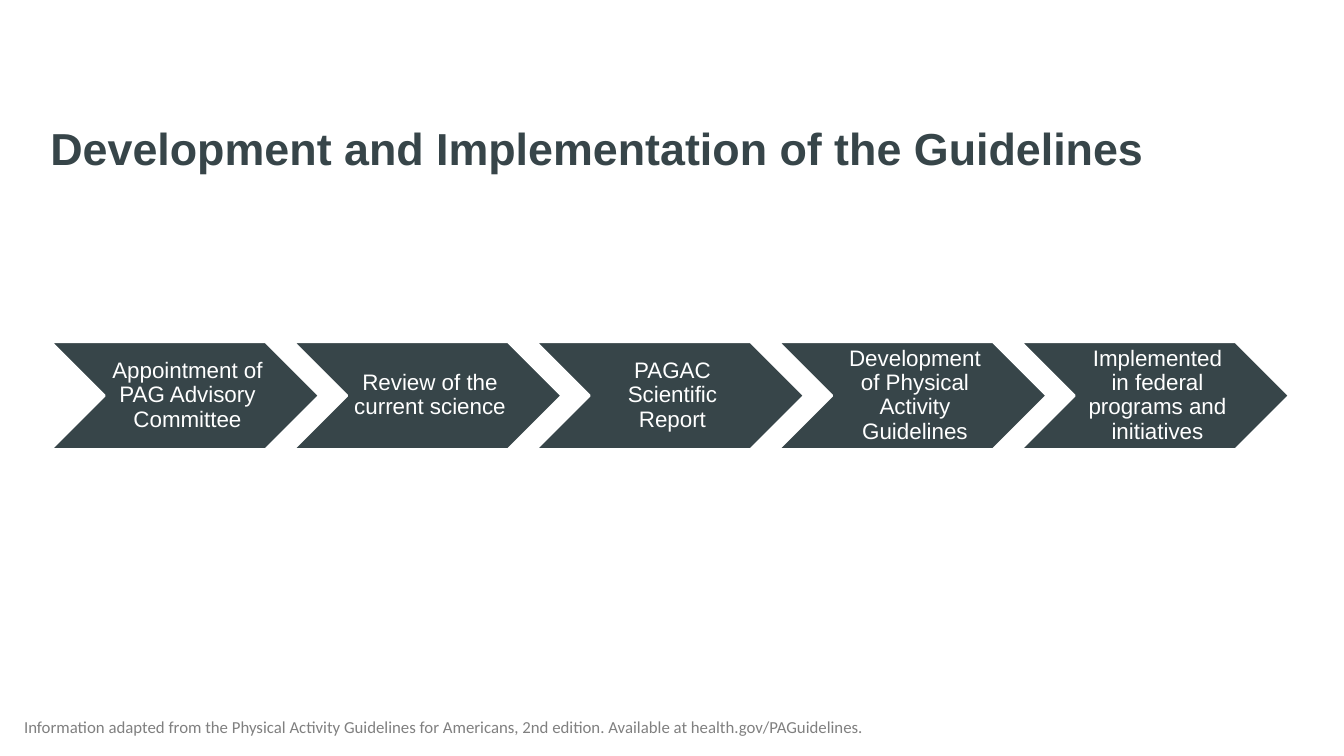
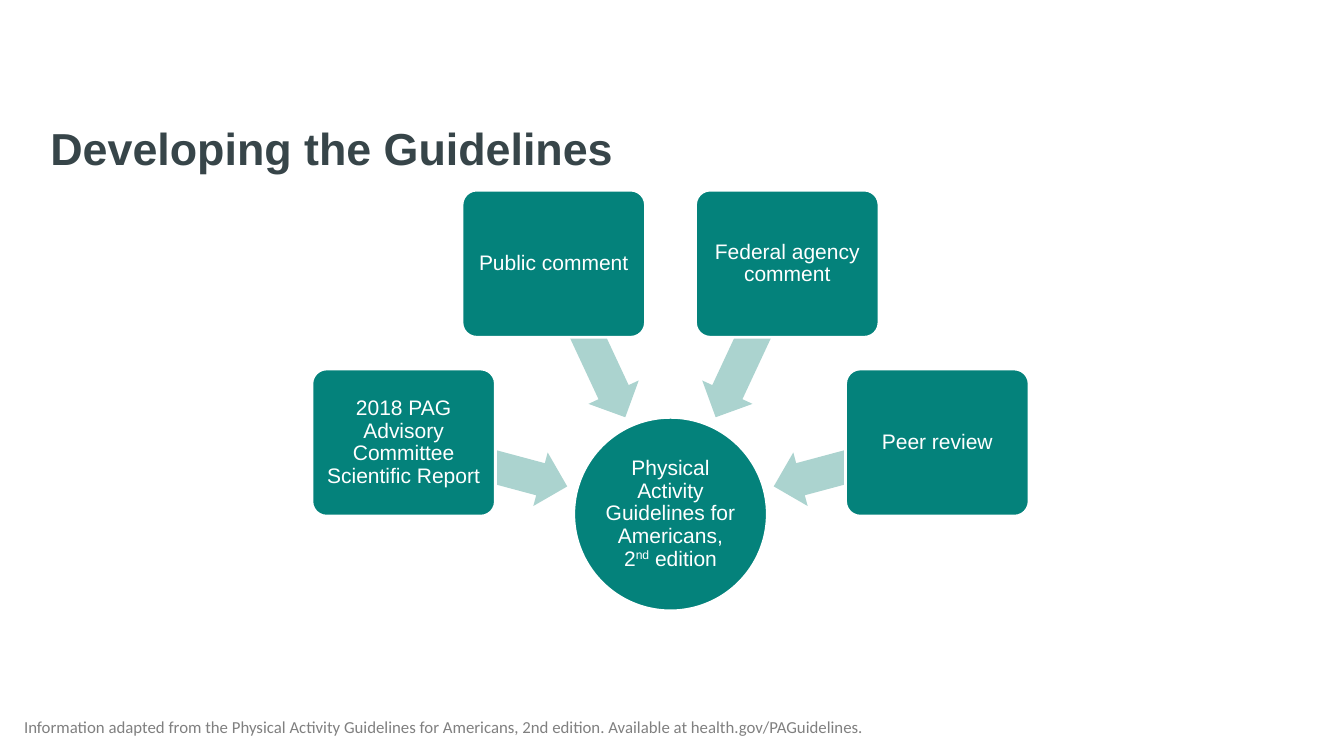
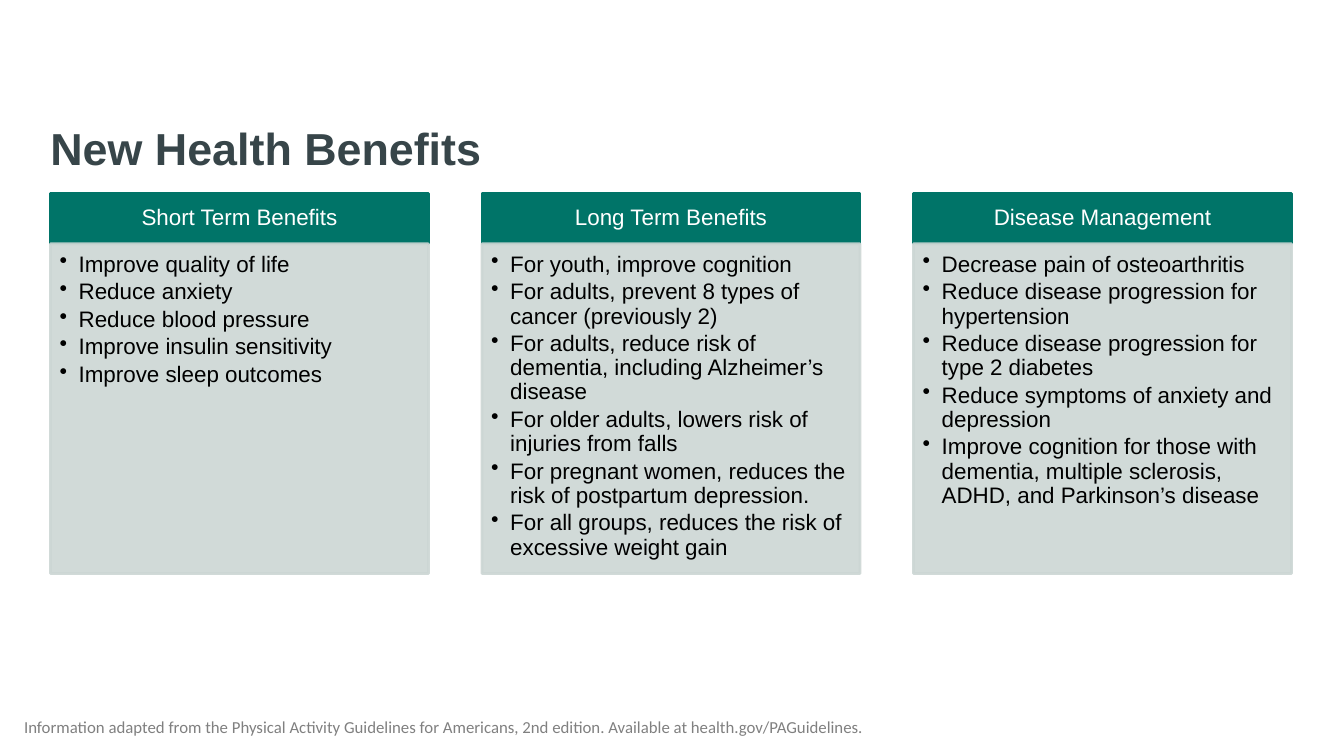
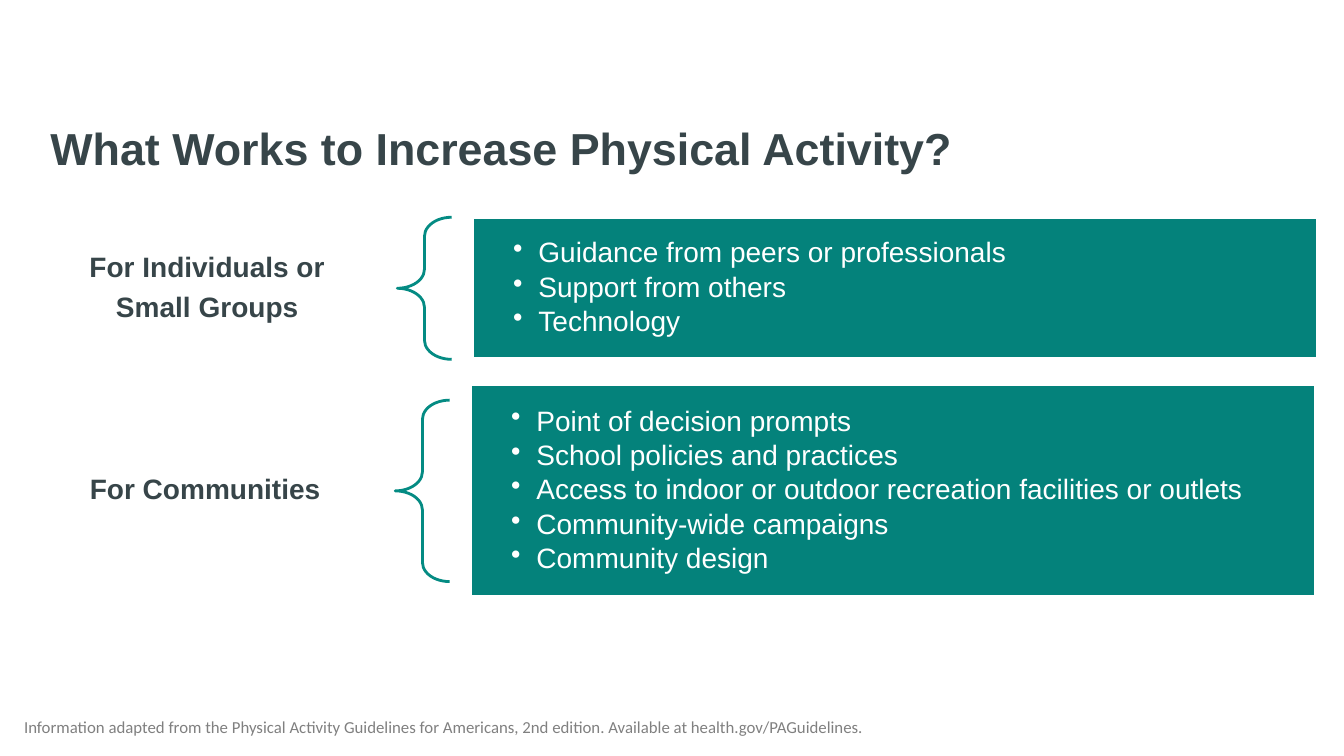
from math import cos, radians, sin

from lxml.etree import SubElement
from pptx import Presentation
from pptx.dml.color import RGBColor
from pptx.enum.shapes import MSO_SHAPE as SHAPE
from pptx.enum.text import MSO_ANCHOR as ANCHOR, PP_ALIGN as ALIGN
from pptx.oxml.ns import qn
from pptx.util import Inches, Pt

# Shared style
SLATE, TEAL, DEEP_TEAL, BRACE_TEAL = "374549", "04827B", "007468", "048B83"
PALE_TEAL, MIST, GREY = "ABD3CF", "CCD6D4", "808080"
WHITE, BLACK = "FFFFFF", "000000"
LEFT = 0.5
SOURCE_NOTE = ("Information adapted from the Physical Activity Guidelines for Americans, "
               "2nd edition. Available at health.gov/PAGuidelines.")


def rgb(color):
    return RGBColor.from_string(color)


def add_shape(slide, kind, box, fill=None, line=None, adjust=()):
    shape = slide.shapes.add_shape(kind, *map(Inches, box))
    shape.shadow.inherit = False
    if fill:
        shape.fill.solid()
        shape.fill.fore_color.rgb = rgb(fill)
    else:
        shape.fill.background()
    if line:
        shape.line.color.rgb = rgb(line)
        shape.line.width = Pt(2)
    else:
        shape.line.fill.background()
    for index, value in enumerate(adjust):
        shape.adjustments[index] = value
    return shape


def set_opacity(shape, percent):
    """Apply one opacity to the fill and the line."""
    for color in shape.element.spPr.iter(qn("a:srgbClr")):
        SubElement(color, qn("a:alpha")).set("val", str(percent * 1000))


def add_bullet(paragraph, indent):
    props = paragraph._p.get_or_add_pPr()
    props.set("marL", str(Inches(indent)))
    props.set("indent", str(-Inches(indent)))
    SubElement(props, qn("a:buChar")).set("char", "•")


def write(shape, lines, size, color, font="Arial", bold=False, align=ALIGN.CENTER,
          anchor=ANCHOR.MIDDLE, insets=(0, 0, 0, 0), spacing=0.9, after=0.35, bullet=None):
    """Write one paragraph per line; a line may be a list of (text, is_superscript)."""
    frame = shape.text_frame
    frame.word_wrap = True
    frame.vertical_anchor = anchor
    (frame.margin_left, frame.margin_top,
     frame.margin_right, frame.margin_bottom) = map(Inches, insets)
    for index, line in enumerate(lines):
        paragraph = frame.add_paragraph() if index else frame.paragraphs[0]
        if bullet:
            add_bullet(paragraph, bullet)
        paragraph.alignment = align
        paragraph.line_spacing = spacing
        paragraph.space_after = Pt(size * after)
        paragraph.font.name = font
        paragraph.font.size = Pt(size)
        paragraph.font.bold = bold
        paragraph.font.color.rgb = rgb(color)
        for text, raised in [(line, False)] if isinstance(line, str) else line:
            run = paragraph.add_run()
            run.text = text
            if raised:
                run._r.get_or_add_rPr().set("baseline", "30000")


def write_bullets(shape, lines, size, color, indent, anchor, insets):
    write(shape, lines, size, color, align=ALIGN.LEFT, anchor=anchor,
          insets=insets, after=0.15, bullet=indent)


def add_text(slide, box, lines, size, color, **style):
    write(slide.shapes.add_textbox(*map(Inches, box)), lines, size, color, **style)


def new_slide(deck, title):
    """Blank slide with the shared source note and title."""
    slide = deck.slides.add_slide(deck.slide_layouts[6])
    footer = add_shape(slide, SHAPE.RECTANGLE, (0.14, 6.65, 10.95, 0.71), WHITE)
    write(footer, [SOURCE_NOTE], 12, GREY, font="Calibri", align=ALIGN.LEFT,
          anchor=ANCHOR.BOTTOM, insets=(0.1, 0.05, 0.1, 0.05), spacing=1.0, after=0)
    add_text(slide, (LEFT, 1.2, 12.3, 0.5), [title], 32, SLATE, bold=True,
             align=ALIGN.LEFT, anchor=ANCHOR.TOP, spacing=1.0, after=0)
    return slide


# Chevron process
def add_process(slide, steps):
    pitch = (10.12 - LEFT) / (len(steps) - 1)
    for index, step in enumerate(steps):
        chevron = add_shape(slide, SHAPE.CHEVRON, (LEFT + index * pitch, 3.39, 2.67, 1.07),
                            SLATE, WHITE)
        write(chevron, [step], 16, WHITE, insets=(0.07, 0.02, 0.02, 0.02))


# Inputs fanned around a hub
def add_fan(slide, hub_text, inputs):
    hub_x, hub_y = 6.65, 5.1

    def box_at(angle, distance, width, height):
        x = hub_x + distance * cos(radians(angle))
        y = hub_y + distance * sin(radians(angle))
        return x - width / 2, y - height / 2, width, height

    hub = add_shape(slide, SHAPE.OVAL, box_at(0, 0, 1.92, 1.92), TEAL, WHITE)
    write(hub, [hub_text], 15, WHITE, insets=(0.01,) * 4)
    for index, text in enumerate(inputs):
        angle = 195 + 50 * index
        arrow = add_shape(slide, SHAPE.LEFT_ARROW, box_at(angle, 1.9, 1.68, 0.55),
                          PALE_TEAL, adjust=(0.6, 0.5))
        arrow.rotation = angle
        card = add_shape(slide, SHAPE.ROUNDED_RECTANGLE, box_at(angle, 2.74, 1.82, 1.46),
                         TEAL, WHITE, adjust=(0.1,))
        write(card, [text], 15, WHITE, insets=(0.03,) * 4)


# Headed columns of bullets
def add_columns(slide, columns):
    for index, (heading, benefits) in enumerate(columns):
        x = LEFT + 4.28 * index
        header = add_shape(slide, SHAPE.RECTANGLE, (x, 1.92, 3.75, 0.5), DEEP_TEAL, DEEP_TEAL)
        write(header, [heading], 16, WHITE, insets=(0.12, 0.07, 0.12, 0.07))
        body = add_shape(slide, SHAPE.RECTANGLE, (x, 2.42, 3.75, 3.27), MIST, MIST)
        set_opacity(body, 90)
        write_bullets(body, benefits, 16, BLACK, 0.19, ANCHOR.TOP, (0.09, 0.09, 0.12, 0.14))


# Label, brace and panel of bullets, centred on one line
def add_braced_row(slide, label, items, x, middle, brace_height, panel_height):
    def box(offset, width, height):
        return x + offset, middle - height / 2, width, height

    add_text(slide, box(0, 3.75, brace_height), label, 20, SLATE, bold=True,
             insets=(0.16, 0.06, 0.16, 0.06))
    add_shape(slide, SHAPE.LEFT_BRACE, box(3.76, 0.54, brace_height),
              line=BRACE_TEAL, adjust=(0.35, 0.5))
    panel = add_shape(slide, SHAPE.RECTANGLE, box(4.51, 8.38, panel_height), TEAL, WHITE)
    write_bullets(panel, items, 20, WHITE, 0.25, ANCHOR.MIDDLE, (0.4, 0.08, 0.08, 0.08))


def main():
    deck = Presentation()
    deck.slide_width, deck.slide_height = Inches(13.33), Inches(7.5)

    slide = new_slide(deck, "Development and Implementation of the Guidelines")
    add_process(slide, [
        "Appointment of PAG Advisory Committee",
        "Review of the current science",
        "PAGAC Scientific Report",
        "Development of Physical Activity Guidelines",
        "Implemented in federal programs and initiatives",
    ])

    slide = new_slide(deck, "Developing the Guidelines")
    add_fan(
        slide,
        [("Physical Activity Guidelines for Americans, 2", False), ("nd", True),
         (" edition", False)],
        ["2018 PAG Advisory Committee Scientific Report", "Public comment",
         "Federal agency comment", "Peer review"],
    )

    slide = new_slide(deck, "New Health Benefits")
    add_columns(slide, [
        ("Short Term Benefits", [
            "Improve quality of life",
            "Reduce anxiety",
            "Reduce blood pressure",
            "Improve insulin sensitivity",
            "Improve sleep outcomes",
        ]),
        ("Long Term Benefits", [
            "For youth, improve cognition",
            "For adults, prevent 8 types of cancer (previously 2)",
            "For adults, reduce risk of dementia, including Alzheimer’s disease",
            "For older adults, lowers risk of injuries from falls",
            "For pregnant women, reduces the risk of postpartum depression.",
            "For all groups, reduces the risk of excessive weight gain",
        ]),
        ("Disease Management", [
            "Decrease pain of osteoarthritis",
            "Reduce disease progression for hypertension",
            "Reduce disease progression for type 2 diabetes",
            "Reduce symptoms of anxiety and depression",
            "Improve cognition for those with dementia, multiple sclerosis, "
            "ADHD, and Parkinson’s disease",
        ]),
    ])

    slide = new_slide(deck, "What Works to Increase Physical Activity?")
    add_braced_row(slide, ["For Individuals or", "Small Groups"], [
        "Guidance from peers or professionals",
        "Support from others",
        "Technology",
    ], x=0.18, middle=2.86, brace_height=1.41, panel_height=1.4)
    add_braced_row(slide, ["For Communities"], [
        "Point of decision prompts",
        "School policies and practices",
        "Access to indoor or outdoor recreation facilities or outlets",
        "Community-wide campaigns",
        "Community design",
    ], x=0.16, middle=4.87, brace_height=1.8, panel_height=2.1)

    deck.save("out.pptx")


if __name__ == "__main__":
    main()
